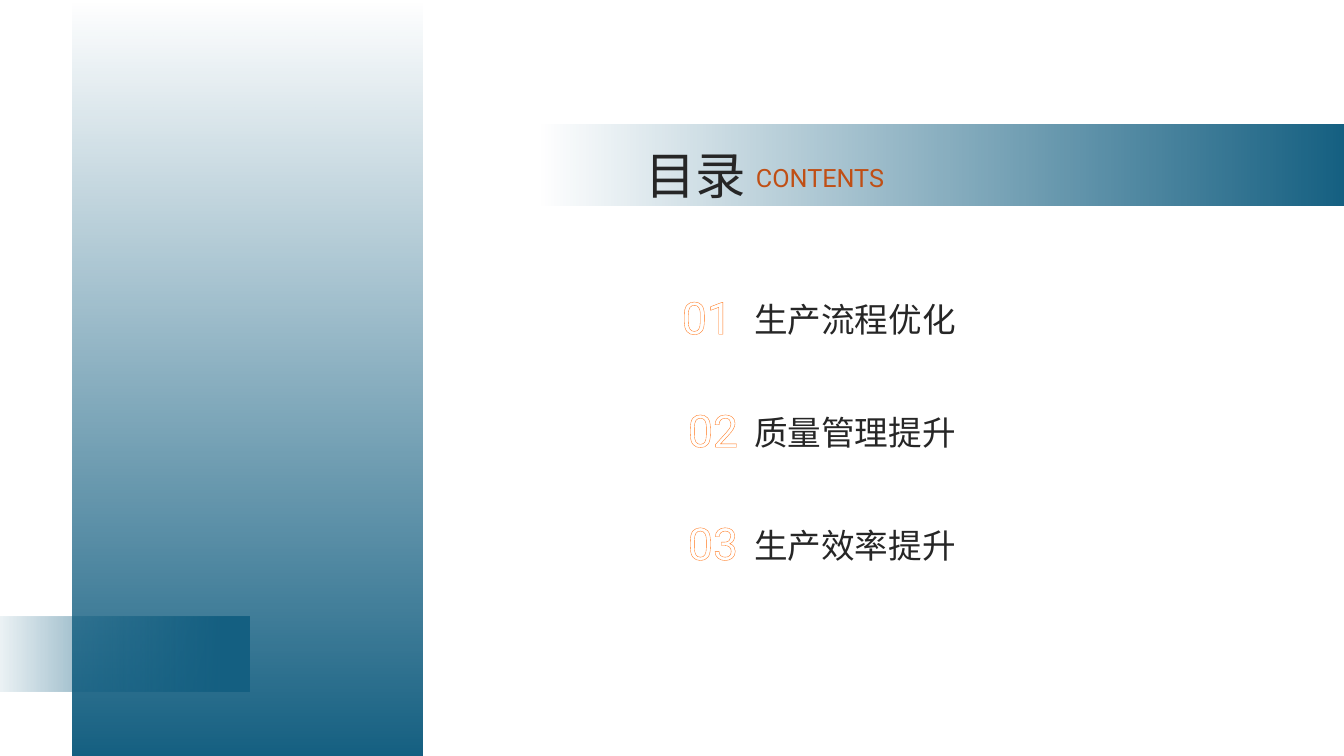
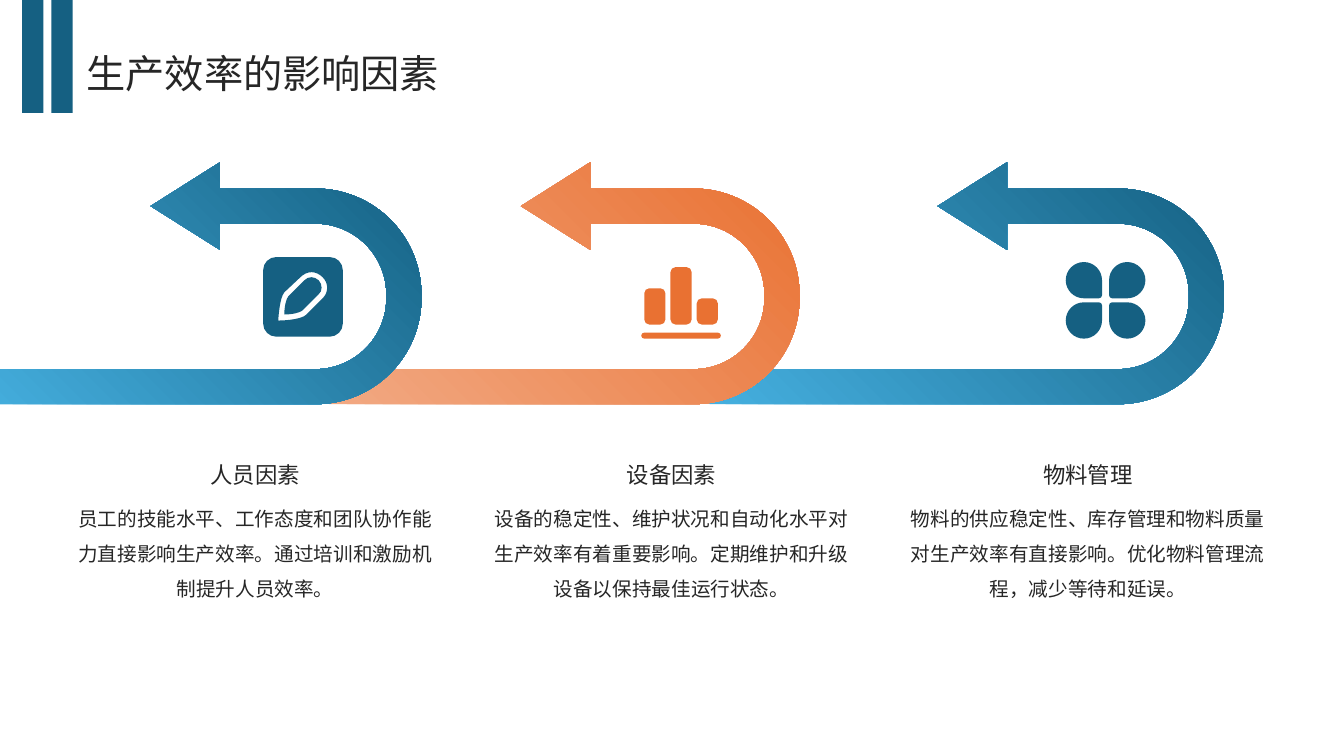
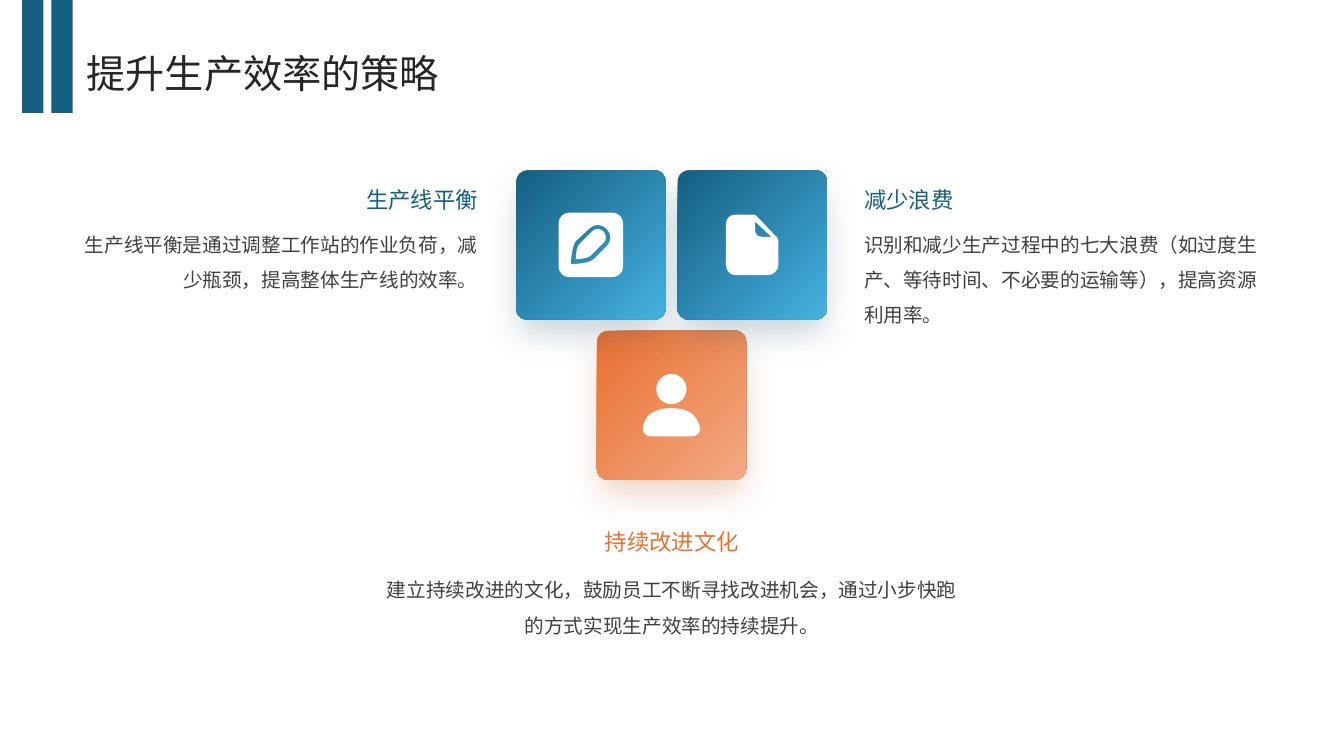
from lxml import etree
from pptx import Presentation
from pptx.dml.color import RGBColor
from pptx.enum.shapes import MSO_SHAPE
from pptx.enum.text import MSO_ANCHOR, PP_ALIGN
from pptx.oxml import parse_xml
from pptx.oxml.ns import nsdecls, qn
from pptx.util import Inches, Pt

RECT = MSO_SHAPE.RECTANGLE
ROUND_RECT = MSO_SHAPE.ROUNDED_RECTANGLE
UTURN = MSO_SHAPE.U_TURN_ARROW
LEFT, CENTER, RIGHT = PP_ALIGN.LEFT, PP_ALIGN.CENTER, PP_ALIGN.RIGHT
TOP, MIDDLE, BOTTOM = MSO_ANCHOR.TOP, MSO_ANCHOR.MIDDLE, MSO_ANCHOR.BOTTOM

BLUE = RGBColor(0x15, 0x60, 0x82)
SKY = RGBColor(0x46, 0xB1, 0xE1)
NAVY = RGBColor(0x10, 0x48, 0x62)
ORANGE = RGBColor(0xE9, 0x71, 0x32)
PEACH = RGBColor(0xF2, 0xAA, 0x84)
RUST = RGBColor(0xC0, 0x4F, 0x15)
NUMBER_LINE = RGBColor(0xFF, 0x76, 0x19)
INK = RGBColor(0x26, 0x26, 0x26)
GREY = RGBColor(0x40, 0x40, 0x40)
WHITE = RGBColor(0xFF, 0xFF, 0xFF)

CJK = "Noto Sans CJK SC"
LATIN = "Roboto"
LABEL = "Karla"


def new_slide(deck):
    return deck.slides.add_slide(deck.slide_layouts[6])


def add_preset(slide, preset, box, color=None):
    shape = slide.shapes.add_shape(preset, *map(Inches, box))
    shape.shadow.inherit = False
    shape.line.fill.background()
    if color is not None:
        shape.fill.solid()
        shape.fill.fore_color.rgb = color
    return shape


def fill_gradient(shape, stops, angle):
    marks = "".join(
        f'<a:gs pos="{position * 1000}"><a:srgbClr val="{color}">'
        f'<a:alpha val="{alpha * 1000}"/></a:srgbClr></a:gs>'
        for position, color, alpha in stops
    )
    gradient = parse_xml(
        f'<a:gradFill {nsdecls("a")} rotWithShape="1"><a:gsLst>{marks}</a:gsLst>'
        f'<a:lin ang="{angle * 60000}" scaled="0"/></a:gradFill>'
    )
    shape.fill.gradient()
    properties = shape.element.spPr
    properties.replace(properties.find(qn("a:gradFill")), gradient)


def drop_shadow(shape, color):
    effects = shape.element.spPr.find(qn("a:effectLst"))
    effects.append(parse_xml(
        f'<a:outerShdw {nsdecls("a")} blurRad="{Pt(26)}" dist="{Pt(15)}" '
        'dir="5400000" sx="94000" sy="94000" algn="t" rotWithShape="0">'
        f'<a:srgbClr val="{color}"><a:alpha val="25000"/></a:srgbClr></a:outerShdw>'
    ))


def add_text(slide, box, text, size, color, font=CJK, align=LEFT, anchor=TOP,
             spacing=1.1, inset=0, outline=None):
    textbox = slide.shapes.add_textbox(*map(Inches, box))
    frame = textbox.text_frame
    frame.word_wrap = True
    frame.vertical_anchor = anchor
    if inset is not None:
        frame.margin_left = frame.margin_right = Inches(inset)
        frame.margin_top = frame.margin_bottom = Inches(inset)
    frame.text = text
    para = frame.paragraphs[0]
    para.alignment = align
    para.line_spacing = spacing
    span = para.runs[0]
    span.font.size = Pt(size)
    span.font.name = font
    span.font.color.rgb = color
    properties = next(textbox.element.iter(qn("a:rPr")))
    etree.SubElement(properties, qn("a:ea")).set("typeface", CJK)
    if outline is not None:
        properties.insert(0, parse_xml(
            f'<a:ln {nsdecls("a")} w="{Pt(1)}"><a:solidFill>'
            f'<a:srgbClr val="{outline}"/></a:solidFill></a:ln>'
        ))


def rounded(x, y, width, height, radii):
    a, b, c, d = radii
    right, bottom, k = x + width, y + height, 0.45
    return [
        (x + a, y), (right - b, y),
        (right - b * k, y, right, y + b * k, right, y + b),
        (right, bottom - c),
        (right, bottom - c * k, right - c * k, bottom, right - c, bottom),
        (x + d, bottom),
        (x + d * k, bottom, x, bottom - d * k, x, bottom - d),
        (x, y + a), (x, y + a * k, x + a * k, y, x + a, y),
    ]


def bend_segments(icon, parts, origin):
    segments = list(icon.element.spPr.iter(qn("a:lnTo")))
    for segment, part in zip(segments, parts):
        if len(part) == 2:
            continue
        curve = etree.Element(qn("a:cubicBezTo"))
        for x, y in zip(part[::2], part[1::2]):
            point = etree.SubElement(curve, qn("a:pt"))
            point.set("x", str(x - origin[0]))
            point.set("y", str(y - origin[1]))
        segment.getparent().replace(segment, curve)


def add_icon(slide, left, top, contours, color, scale=1):
    outlines = [
        [tuple(Inches(value * scale) for value in part) for part in contour]
        for contour in contours
    ]
    builder = slide.shapes.build_freeform(*outlines[0][0])
    for index, outline in enumerate(outlines):
        if index:
            builder.move_to(*outline[0])
        builder.add_line_segments([part[-2:] for part in outline[1:]], close=True)
    icon = builder.convert_to_shape(Inches(left), Inches(top))
    ends = [part[-2:] for outline in outlines for part in outline]
    origin = min(x for x, _ in ends), min(y for _, y in ends)
    bend_segments(icon, [part for outline in outlines for part in outline[1:]], origin)
    icon.shadow.inherit = False
    icon.line.fill.background()
    icon.fill.solid()
    icon.fill.fore_color.rgb = color


PEN = [
    rounded(0, 0, 0.79, 0.79, [0.13] * 4),
    [(0.48, 0.15), (0.44, 0.15, 0.4, 0.17, 0.37, 0.2), (0.21, 0.35),
     (0.16, 0.41, 0.15, 0.63, 0.15, 0.63), (0.15, 0.63, 0.37, 0.63, 0.43, 0.57),
     (0.59, 0.41), (0.65, 0.35, 0.65, 0.26, 0.59, 0.2),
     (0.56, 0.17, 0.52, 0.15, 0.48, 0.15)],
    [(0.48, 0.2), (0.5, 0.2, 0.53, 0.21, 0.55, 0.23),
     (0.59, 0.27, 0.59, 0.34, 0.55, 0.37), (0.39, 0.53),
     (0.37, 0.55, 0.29, 0.57, 0.21, 0.57), (0.21, 0.49, 0.23, 0.41, 0.25, 0.39),
     (0.41, 0.23), (0.43, 0.21, 0.45, 0.2, 0.48, 0.2)],
]
BARS = [rounded(0, 0.65, 0.79, 0.06, [0.03] * 4)] + [
    rounded(x, y, 0.21, 0.57 - y, [0.05] * 4)
    for x, y in ((0.03, 0.21), (0.29, 0), (0.55, 0.31))
]
CLOVER = [
    rounded(x, y, 0.36, 0.36, [0.03 if corner == inner else 0.18 for corner in range(4)])
    for x, y, inner in ((0, 0, 2), (0.43, 0, 3), (0.43, 0.4, 0), (0, 0.4, 1))
]
DOCUMENT = [
    [(0.09, 0), (0.28, 0), (0.29, 0, 0.29, 0, 0.3, 0.01), (0.51, 0.23),
     (0.52, 0.24, 0.52, 0.24, 0.52, 0.25), (0.52, 0.5),
     (0.52, 0.55, 0.47, 0.6, 0.42, 0.6), (0.09, 0.6),
     (0.04, 0.6, 0, 0.55, 0, 0.5), (0, 0.09), (0, 0.04, 0.04, 0, 0.09, 0)],
    [(0.29, 0.07), (0.29, 0.17), (0.29, 0.2, 0.32, 0.22, 0.35, 0.22), (0.45, 0.22)],
]
PERSON = [
    [(0.28, 0.34), (0.47, 0.34, 0.53, 0.42, 0.56, 0.52),
     (0.58, 0.57, 0.54, 0.62, 0.48, 0.62), (0.08, 0.62),
     (0.02, 0.62, -0.02, 0.57, 0, 0.52), (0.02, 0.42, 0.09, 0.34, 0.28, 0.34)],
    rounded(0.13, 0, 0.3, 0.3, [0.15] * 4),
]


def add_fade(slide, box, angle, solid_until=0):
    band = add_preset(slide, RECT, box)
    fill_gradient(band, [(solid_until, BLUE, 100), (100, BLUE, 0)], angle)


def add_title(slide, text):
    add_text(slide, (0.86, 0.44, 11.67, 0.51), text, 28, INK, anchor=MIDDLE)
    for left in (0.51, 0.22):
        add_preset(slide, RECT, (left, 0, 0.21, 1.12), BLUE)


def add_contents_row(slide, top, number_left, number, label):
    add_text(slide, (number_left, top, 1.7, 0.77), number, 32, WHITE, LATIN, RIGHT,
             inset=None, outline=NUMBER_LINE)
    add_text(slide, (7.38, top + 0.03, 5.21, 0.96), label, 24, INK, LABEL,
             spacing=1.3, inset=None)


def build_contents(deck):
    slide = new_slide(deck)
    add_fade(slide, (5.33, 1.24, 8, 0.8), 180)
    add_fade(slide, (0.72, 0, 3.47, 7.5), 270)
    add_fade(slide, (-0.18, 6.12, 2.66, 0.74), 180, solid_until=9)
    add_text(slide, (6.3, 1.32, 6.31, 0.71), "目录", 36, INK, LATIN, inset=None)
    add_text(slide, (7.4, 1.53, 5.2, 0.33), "CONTENTS", 18, RUST, LATIN, inset=None)
    rows = ((5.66, "01", "生产流程优化"), (5.72, "02", "质量管理提升"),
            (5.72, "03", "生产效率提升"))
    for index, row in enumerate(rows):
        add_contents_row(slide, 2.77 + 1.12 * index, *row)


def add_arrow(slide, left, length, bend, light, dark):
    top, height = 1.61, 2.4
    box = (left + (length - height) / 2, top + (height - length) / 2, height, length)
    arrow = add_preset(slide, UTURN, box)
    arrow.rotation = 90
    arrow.element.spPr.find(qn("a:xfrm")).set("flipH", "1")
    for index, percent in enumerate((14.5, 18.1, 28.7, 43.8, bend)):
        arrow.adjustments[index] = percent / 100
    fill_gradient(arrow, [(0, light, 100), (100, dark, 100)], 315)


def add_factor(slide, left, heading, body):
    add_text(slide, (left, 4.91, 3.62, 1.52), body, 14, INK, align=CENTER, spacing=1.5)
    add_text(slide, (left, 4.01, 3.62, 0.83), heading, 16, INK, align=CENTER,
             anchor=BOTTOM, spacing=1.3)


def build_factors(deck):
    slide = new_slide(deck)
    add_arrow(slide, 6.88, 5.26, 54, SKY, BLUE)
    add_arrow(slide, 3.09, 4.84, 57.1, PEACH, ORANGE)
    add_arrow(slide, -0.46, 4.64, 57.9, SKY, BLUE)
    add_icon(slide, 2.61, 2.55, PEN, BLUE)
    add_icon(slide, 6.36, 2.65, BARS, ORANGE)
    add_icon(slide, 10.57, 2.6, CLOVER, BLUE)
    factors = (
        ("人员因素", "员工的技能水平、工作态度和团队协作能力直接影响生产效率。通过培训和激励机制提升人员效率。"),
        ("设备因素", "设备的稳定性、维护状况和自动化水平对生产效率有着重要影响。定期维护和升级设备以保持最佳运行状态。"),
        ("物料管理", "物料的供应稳定性、库存管理和物料质量对生产效率有直接影响。优化物料管理流程，减少等待和延误。"),
    )
    for index, factor in enumerate(factors):
        add_factor(slide, 0.72 + 4.13 * index, *factor)
    add_title(slide, "生产效率的影响因素")


def add_tile(slide, left, top, dark, light, shade, icon, dx, dy, scale=1):
    tile = add_preset(slide, ROUND_RECT, (left, top, 1.48, 1.48))
    tile.adjustments[0] = 7.5 / 100
    fill_gradient(tile, [(1, dark, 100), (100, light, 100)], 45)
    drop_shadow(tile, shade)
    add_icon(slide, left + dx, top + dy, icon, WHITE, scale)


def add_strategy(slide, heading_box, body_top, align, color, heading, body):
    left, _, width, _ = heading_box
    add_text(slide, heading_box, heading, 16, color, align=align, anchor=BOTTOM, spacing=1.3)
    add_text(slide, (left, body_top, width, 1.18), body, 14, GREY, align=align, spacing=1.5)


def build_strategies(deck):
    slide = new_slide(deck)
    add_tile(slide, 5.92, 3.28, ORANGE, PEACH, RUST, PERSON, 0.46, 0.43)
    add_tile(slide, 6.72, 1.69, BLUE, SKY, NAVY, DOCUMENT, 0.48, 0.44)
    add_tile(slide, 5.12, 1.69, BLUE, SKY, NAVY, PEN, 0.42, 0.42, 0.81)
    add_strategy(slide, (0.72, 1.23, 4.02, 0.88), 2.19, RIGHT, BLUE, "生产线平衡",
                 "生产线平衡是通过调整工作站的作业负荷，减少瓶颈，提高整体生产线的效率。")
    add_strategy(slide, (8.57, 1.23, 4.02, 0.88), 2.19, LEFT, BLUE, "减少浪费",
                 "识别和减少生产过程中的七大浪费（如过度生产、等待时间、不必要的运输等），提高资源利用率。")
    add_strategy(slide, (3.82, 4.92, 5.69, 0.59), 5.62, CENTER, ORANGE, "持续改进文化",
                 "建立持续改进的文化，鼓励员工不断寻找改进机会，通过小步快跑的方式实现生产效率的持续提升。")
    add_title(slide, "提升生产效率的策略")


def main():
    deck = Presentation()
    deck.slide_width = Inches(13.33)
    deck.slide_height = Inches(7.5)
    build_contents(deck)
    build_factors(deck)
    build_strategies(deck)
    deck.save("out.pptx")


if __name__ == "__main__":
    main()
